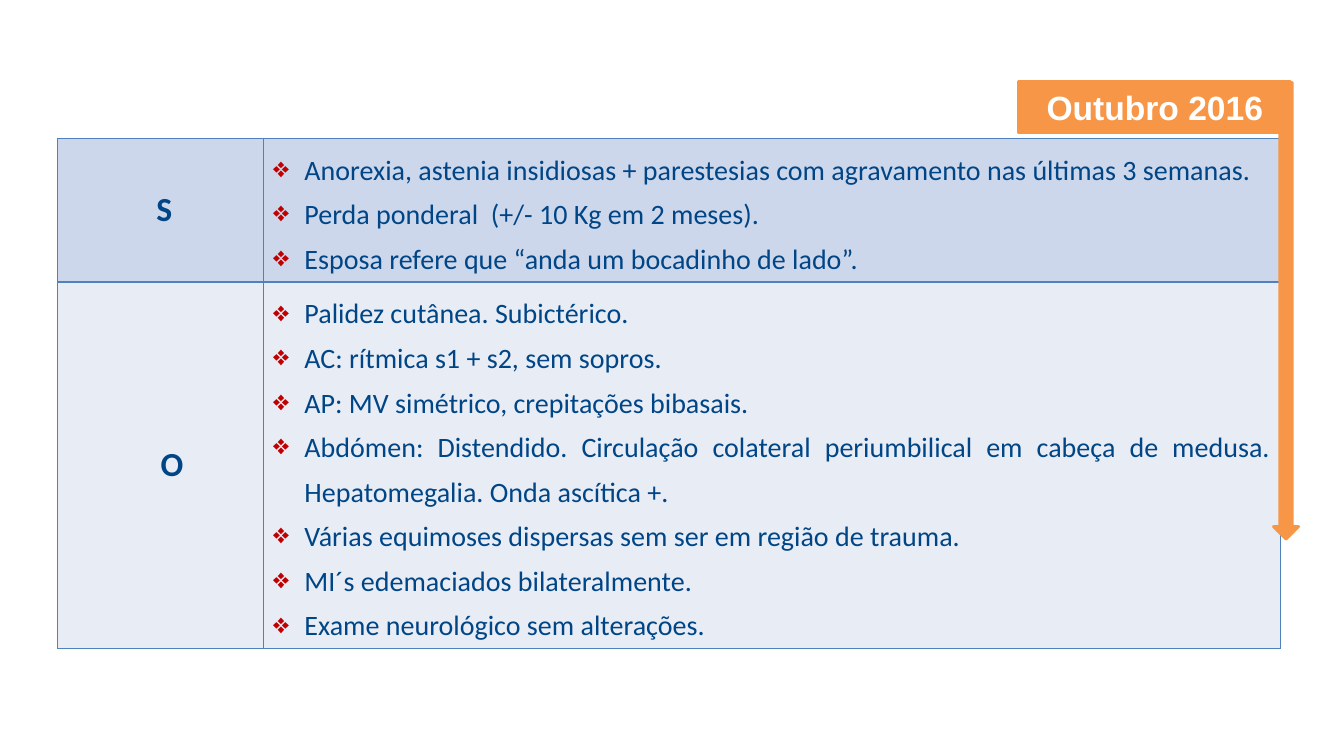
from dataclasses import dataclass

import pptx
import pptx.dml.color
import pptx.enum.shapes
import pptx.enum.text
import pptx.oxml.ns
import pptx.util
from lxml import etree

EMU_PER_PX = 9144  # 100 px to the inch
CELL_MARGIN = 10
BULLET_INDENT = 31
NAVY, RED, BLUE, ORANGE, WHITE = "004586", "C00000", "4F81BD", "F79646", "FFFFFF"
ALIGN = pptx.enum.text.PP_ALIGN
ANCHOR = pptx.enum.text.MSO_ANCHOR
SHAPE = pptx.enum.shapes.MSO_SHAPE


@dataclass
class RecordRow:
    letter: str
    letter_shift: int
    findings: list[str]
    height: int
    fill: str
    borders: dict[str, int]


@dataclass
class Marker:
    kind: SHAPE
    left: int
    top: int
    width: int
    height: int


ROWS = [
    RecordRow("S", 8, [
        "Anorexia, astenia insidiosas + parestesias com agravamento nas últimas 3 semanas.",
        "Perda ponderal  (+/- 10 Kg em 2 meses).",
        "Esposa refere que “anda um bocadinho de lado”.",
    ], 142, "CDD7EB", {"lnL": 1, "lnR": 1, "lnT": 1, "lnB": 2}),
    RecordRow("O", 23, [
        "Palidez cutânea. Subictérico.",
        "AC: rítmica s1 + s2, sem sopros.",
        "AP: MV simétrico, crepitações bibasais.",
        "Abdómen: Distendido. Circulação colateral periumbilical em cabeça de medusa. "
        "Hepatomegalia. Onda ascítica +.",
        "Várias equimoses dispersas sem ser em região de trauma.",
        "MI´s edemaciados bilateralmente.",
        "Exame neurológico sem alterações.",
    ], 363, "E8ECF5", {"lnL": 1, "lnR": 1, "lnT": 2, "lnB": 1}),
]
COLUMNS = [204, 1009]
DATE_LABEL = Marker(SHAPE.RECTANGLE, 1010, 81, 270, 51)
TIME_ARROW = Marker(SHAPE.DOWN_ARROW, 1263, 82, 25, 453)

LETTER_FONT = {"name": "Calibri", "size": pptx.util.Pt(24), "bold": True}
FINDING_FONT = {"name": "Calibri", "size": pptx.util.Pt(20), "bold": False}
DATE_FONT = {"name": "Arial", "size": pptx.util.Pt(24), "bold": True}


def px(length: int) -> pptx.util.Emu:
    return pptx.util.Emu(length * EMU_PER_PX)


def rgb(colour: str) -> pptx.dml.color.RGBColor:
    return pptx.dml.color.RGBColor.from_string(colour)


def add_element(parent, tag: str, **attributes: str):
    return etree.SubElement(parent, pptx.oxml.ns.qn(f"a:{tag}"), attributes)


def write(para, text: str, font: dict, colour: str) -> None:
    span = para.add_run()
    span.text = text
    for name, value in font.items():
        setattr(span.font, name, value)
    span.font.color.rgb = rgb(colour)


def add_bullet(para) -> None:
    properties = para._p.get_or_add_pPr()
    properties.set("marL", str(px(BULLET_INDENT)))
    properties.set("indent", str(px(-BULLET_INDENT)))
    add_element(add_element(properties, "buClr"), "srgbClr", val=RED)
    add_element(properties, "buChar", char="❖")


def style_cell(cell, row: RecordRow) -> None:
    properties = cell._tc.get_or_add_tcPr()
    for edge, points in row.borders.items():
        line = add_element(properties, edge, w=str(pptx.util.Pt(points)))
        add_element(add_element(line, "solidFill"), "srgbClr", val=BLUE)
    cell.fill.solid()
    cell.fill.fore_color.rgb = rgb(row.fill)


def fill_row(letter_cell, findings_cell, row: RecordRow) -> None:
    for cell in (letter_cell, findings_cell):
        style_cell(cell, row)

    letter_cell.vertical_anchor = ANCHOR.MIDDLE
    letter_cell.margin_left = px(CELL_MARGIN + row.letter_shift)
    para = letter_cell.text_frame.paragraphs[0]
    para.alignment = ALIGN.CENTER
    write(para, row.letter, LETTER_FONT, NAVY)

    frame = findings_cell.text_frame
    for index, finding in enumerate(row.findings):
        para = frame.add_paragraph() if index else frame.paragraphs[0]
        add_bullet(para)
        para.alignment = ALIGN.JUSTIFY
        para.line_spacing = 1.3
        write(para, finding, FINDING_FONT, NAVY)


def add_record_table(page) -> None:
    height = sum(row.height for row in ROWS)
    table = page.shapes.add_table(len(ROWS), len(COLUMNS), px(57), px(137),
                                  px(sum(COLUMNS)), px(height)).table
    table.first_row = False
    table.horz_banding = False
    for column, width in zip(table.columns, COLUMNS):
        column.width = px(width)
    for index, row in enumerate(ROWS):
        table.rows[index].height = px(row.height)
        fill_row(table.cell(index, 0), table.cell(index, 1), row)


def add_marker(page, marker: Marker):
    shape = page.shapes.add_shape(marker.kind, px(marker.left), px(marker.top),
                                  px(marker.width), px(marker.height))
    shape.shadow.inherit = False
    shape.fill.solid()
    shape.fill.fore_color.rgb = rgb(ORANGE)
    shape.line.color.rgb = rgb(ORANGE)
    shape.line.width = pptx.util.Pt(2)
    return shape


def add_date(page) -> None:
    frame = add_marker(page, DATE_LABEL).text_frame
    frame.margin_left = px(28)
    frame.word_wrap = True
    frame.vertical_anchor = ANCHOR.MIDDLE
    para = frame.paragraphs[0]
    para.alignment = ALIGN.LEFT
    write(para, "Outubro 2016", DATE_FONT, WHITE)


def main() -> None:
    deck = pptx.Presentation()
    deck.slide_width, deck.slide_height = px(1333), px(750)
    page = deck.slides.add_slide(deck.slide_layouts[6])
    add_record_table(page)
    add_date(page)
    add_marker(page, TIME_ARROW)
    deck.save("out.pptx")


if __name__ == "__main__":
    main()
